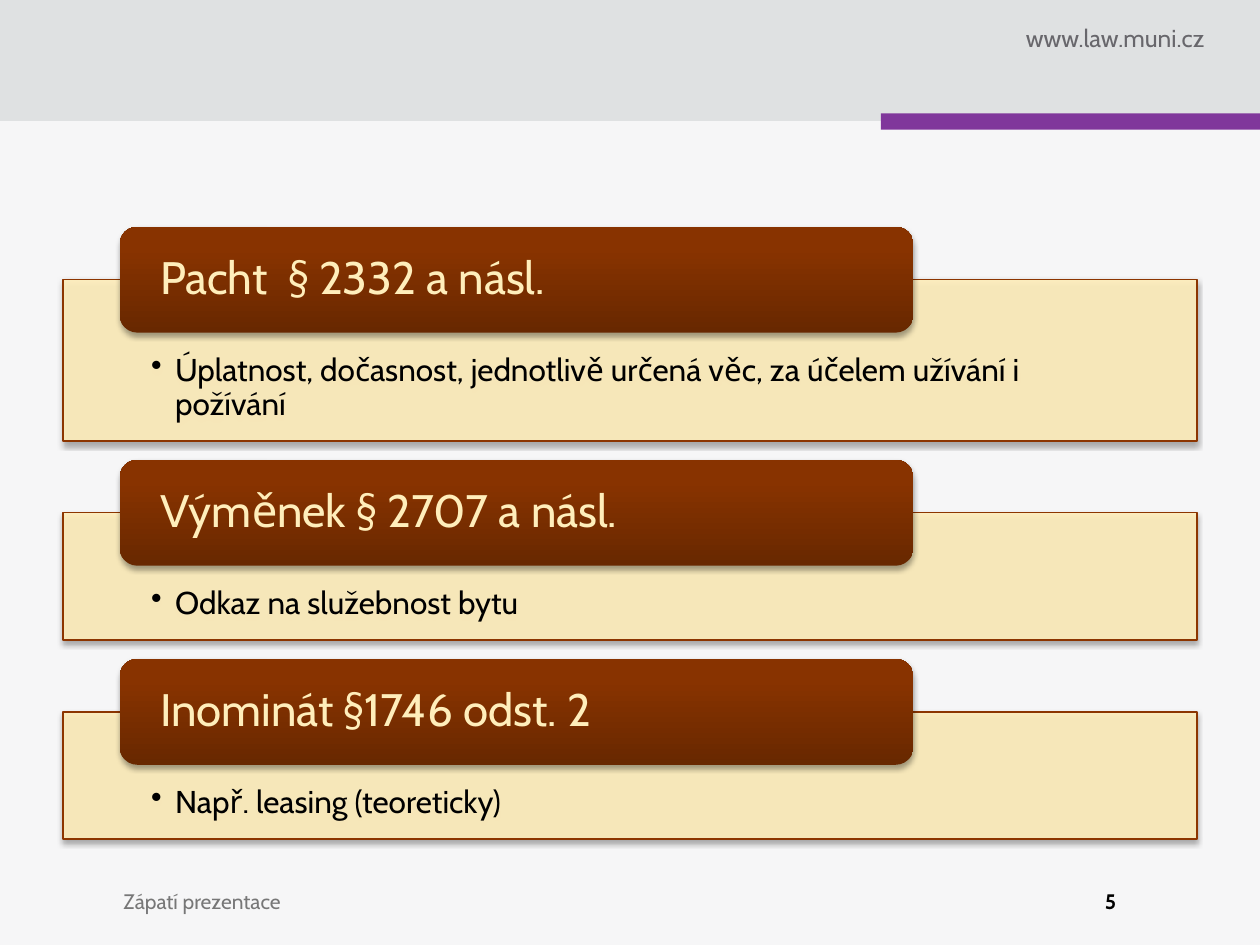
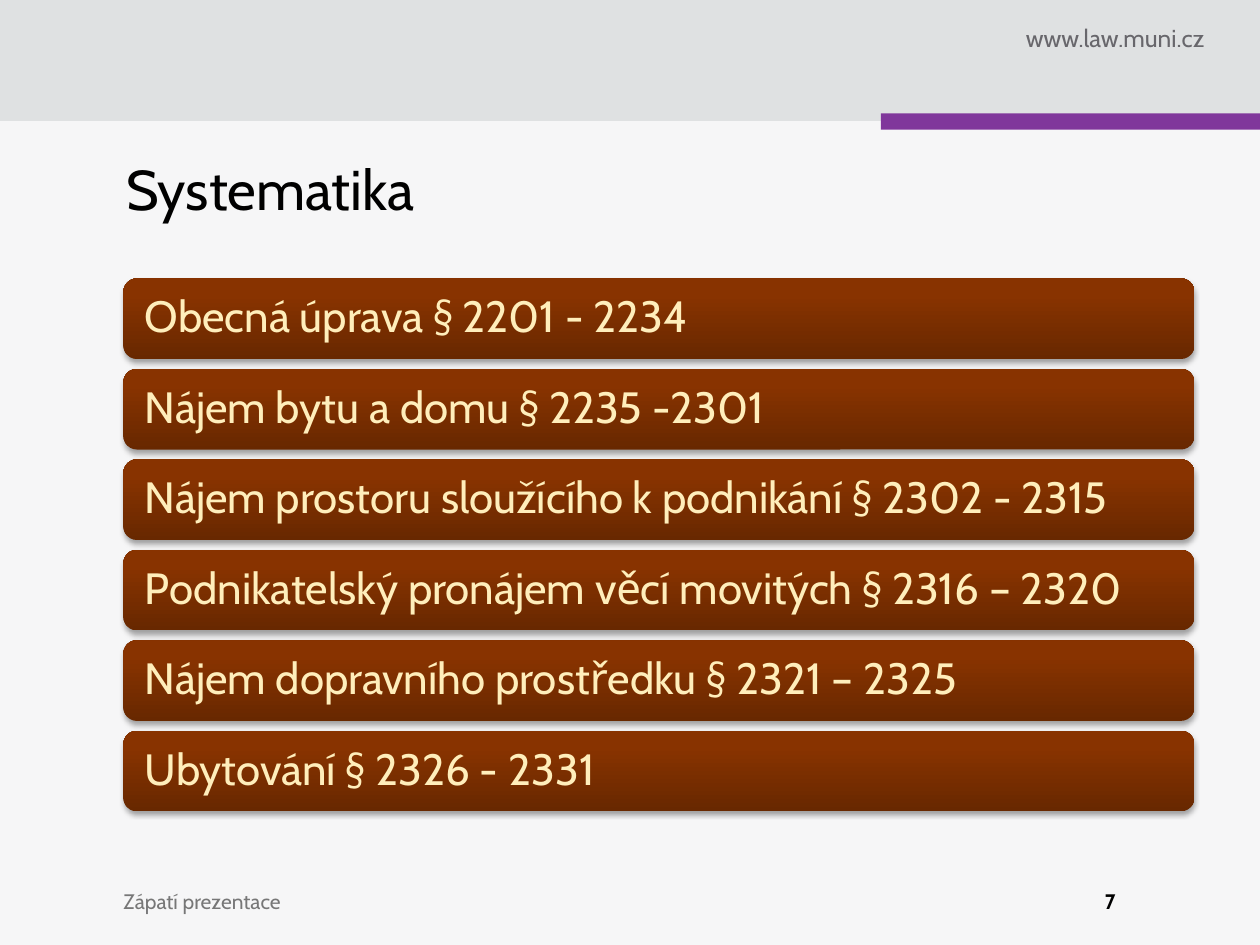
from dataclasses import dataclass

from lxml import etree
from pptx import Presentation, util as u
from pptx.dml.color import RGBColor
from pptx.enum import shapes, text
from pptx.oxml.ns import qn

CONTRACTS = [  # heading, detail, panel height
    ("Pacht  § 2332 a násl.",
     "Úplatnost, dočasnost, jednotlivě určená věc, za účelem užívání i požívání", 1.28),
    ("Výměnek § 2707 a násl.", "Odkaz na služebnost bytu", 1.01),
    ("Inominát §1746 odst. 2", "Např. leasing (teoreticky)", 1.01),
]
SYSTEM_TITLE = "Systematika"
SYSTEM = [
    "Obecná úprava § 2201 - 2234",
    "Nájem bytu a domu § 2235 -2301",
    "Nájem prostoru sloužícího k podnikání § 2302 - 2315",
    "Podnikatelský pronájem věcí movitých § 2316 – 2320",
    "Nájem dopravního prostředku § 2321 – 2325",
    "Ubytování § 2326 - 2331",
]
WEBSITE = "www.law.muni.cz"
FOOTER = "Zápatí prezentace"
WIDTH, HEIGHT = 10, 7.5
MARGIN = 0.98


@dataclass(frozen=True)
class Theme:
    font: str = "Cabin"
    page: str = "F6F6F7"
    band: str = "DFE1E2"
    accent: str = "80379B"
    website: str = "68676C"
    footer: str = "777777"
    ink: str = "000000"
    cream: str = "FFEEBB"
    border: str = "8C3500"
    bar_bottom: str = "682800"
    bar_top: str = "883300"
    title_size: int = 32
    heading_size: int = 26
    item_size: int = 25
    detail_size: int = 18
    website_size: int = 14
    footer_size: int = 12


THEME = Theme()


def rgb(code):
    return RGBColor.from_string(code)


def inches(*lengths):
    return [u.Inches(length) for length in lengths]


def write(shape, words, size, color, insets=(0, 0, 0, 0), anchor=text.MSO_ANCHOR.TOP,
          align=text.PP_ALIGN.LEFT, bold=False, spacing=None, bullet=False):
    """Fill a shape with one paragraph; insets run left, top, right, bottom."""
    frame = shape.text_frame
    frame.word_wrap = True
    frame.auto_size = text.MSO_AUTO_SIZE.NONE
    frame.vertical_anchor = anchor
    (frame.margin_left, frame.margin_top,
     frame.margin_right, frame.margin_bottom) = inches(*insets)
    frame.text = words
    paragraph = frame.paragraphs[0]
    paragraph.alignment = align
    paragraph.line_spacing = spacing
    if bullet:
        properties = paragraph._p.get_or_add_pPr()
        properties.set("marL", str(u.Inches(0.19)))
        properties.set("indent", str(-u.Inches(0.19)))
        etree.SubElement(properties, qn("a:buChar"), char="•")
    font = paragraph.font
    font.name, font.size, font.bold = THEME.font, u.Pt(size), bold
    font.color.rgb = rgb(color)


def add_label(slide, box, *args, **options):
    write(slide.shapes.add_textbox(*inches(*box)), *args, **options)


def add_block(slide, kind, box):
    block = slide.shapes.add_shape(kind, *inches(*box))
    block.shadow.inherit = False
    block.line.fill.background()
    return block


def add_band(slide, box, color):
    band = add_block(slide, shapes.MSO_SHAPE.RECTANGLE, box)
    band.fill.solid()
    band.fill.fore_color.rgb = rgb(color)
    return band


def set_alpha(color, percent):
    etree.SubElement(color, qn("a:alpha"), val=str(percent * 1000))


def add_shadow(shape):
    effects = shape._element.spPr.find(qn("a:effectLst"))
    shadow = etree.SubElement(effects, qn("a:outerShdw"), blurRad=str(u.Pt(3.1)),
                              dist=str(u.Pt(1.8)), dir="5400000", rotWithShape="0")
    set_alpha(etree.SubElement(shadow, qn("a:srgbClr"), val="000000"), 35)


def add_bar(slide, box, words, size, inset):
    bar = add_block(slide, shapes.MSO_SHAPE.ROUNDED_RECTANGLE, box)
    bar.fill.gradient()
    bar.fill.gradient_angle = 90
    stops = ((0, THEME.bar_bottom), (0.8, THEME.bar_top))
    for stop, (position, color) in zip(bar.fill.gradient_stops, stops):
        stop.position = position
        stop.color.rgb = rgb(color)
    add_shadow(bar)
    write(bar, words, size, THEME.cream, (inset, 0, inset, 0),
          anchor=text.MSO_ANCHOR.MIDDLE, spacing=0.9)


def add_panel(slide, box, detail):
    panel = add_band(slide, box, THEME.cream)
    set_alpha(panel._element.spPr.find(qn("a:solidFill"))[0], 90)
    panel.line.color.rgb = rgb(THEME.border)
    panel.line.width = u.Pt(0.75)
    add_shadow(panel)
    write(panel, detail, THEME.detail_size, THEME.ink, (0.7, 0.59, 0.7, 0.14),
          spacing=0.9, bullet=True)


def add_slide(prs, layout, number):
    slide = prs.slides.add_slide(prs.slide_layouts.get_by_name(layout))
    add_band(slide, (0, -0.01, WIDTH, 0.97), THEME.band)
    add_label(slide, (7.2, 0.18, 2.36, 0.23), WEBSITE, THEME.website_size,
              THEME.website, align=text.PP_ALIGN.RIGHT)
    add_band(slide, (6.99, 0.9, WIDTH - 6.99, 0.13), THEME.accent)
    add_label(slide, (MARGIN, 7.05, 7.48, 0.29), FOOTER, THEME.footer_size, THEME.footer)
    add_label(slide, (8.77, 7.05, 0.73, 0.29), str(number), THEME.footer_size,
              THEME.ink, bold=True)
    return slide


def add_contracts(prs):
    slide = add_slide(prs, "Blank", 5)
    tab_height, gap, left = 0.84, 0.15, 0.5
    top = 1.8
    for heading, detail, height in CONTRACTS:
        panel_top = top + tab_height / 2
        add_panel(slide, (left, panel_top, WIDTH - 2 * left, height), detail)
        add_bar(slide, (0.95, top, 6.3, tab_height), heading, THEME.heading_size, 0.28)
        top = panel_top + height + gap


def add_system(prs):
    slide = add_slide(prs, "Title Only", 7)
    title = slide.shapes.title
    title.left, title.top, title.width, title.height = inches(1, 1.23, 8.5, 0.55)
    write(title, SYSTEM_TITLE, THEME.title_size, THEME.ink)
    first, last, height = 2.21, 5.8, 0.64
    pitch = (last - first) / (len(SYSTEM) - 1)
    for row, item in enumerate(SYSTEM):
        add_bar(slide, (MARGIN, first + row * pitch, 8.5, height), item,
                THEME.item_size, 0.14)


def main():
    prs = Presentation()
    prs.slide_width, prs.slide_height = inches(WIDTH, HEIGHT)
    background = prs.slide_master.background.fill
    background.solid()
    background.fore_color.rgb = rgb(THEME.page)
    add_contracts(prs)
    add_system(prs)
    prs.save("out.pptx")


if __name__ == "__main__":
    main()
